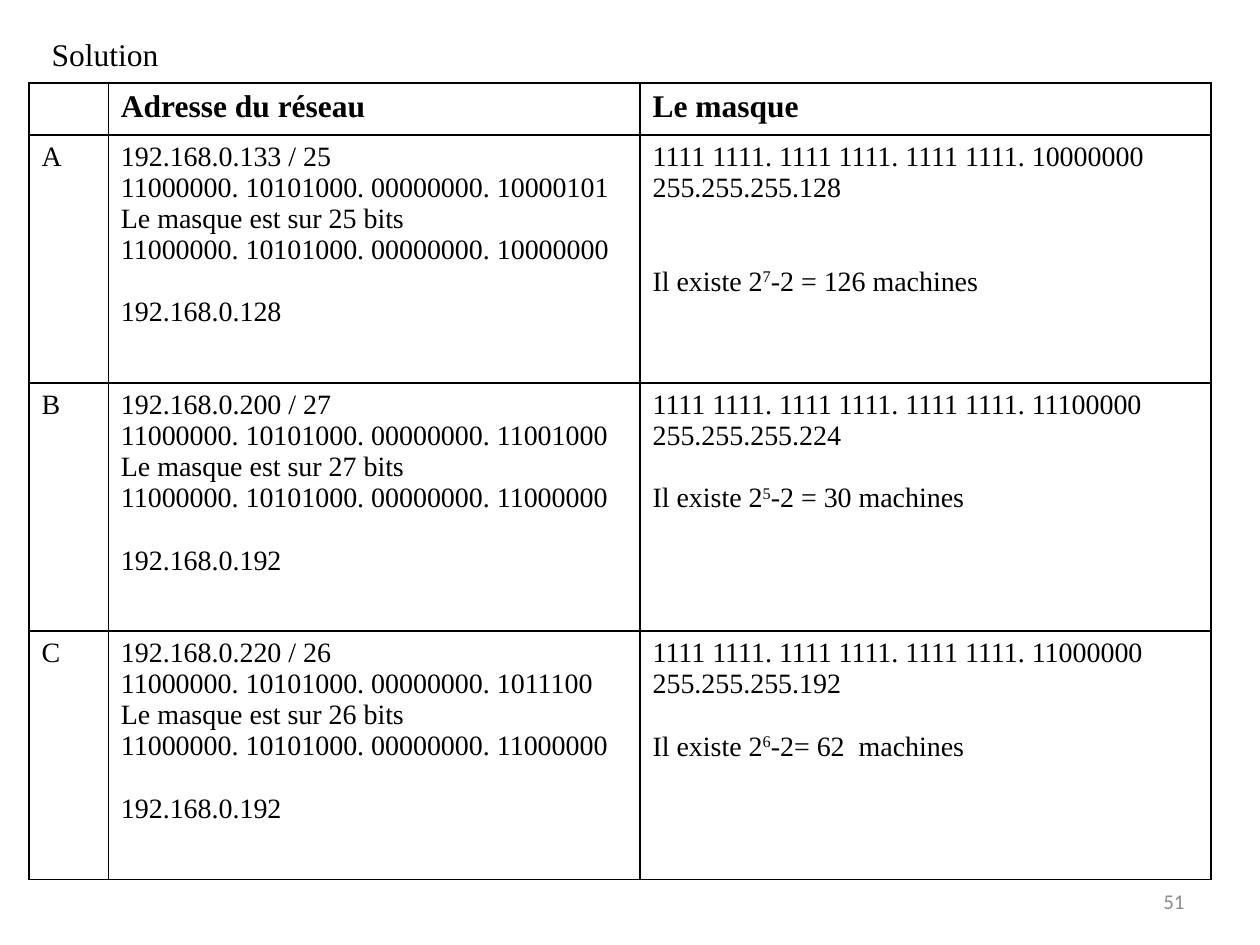
from lxml import etree
from pptx import Presentation
from pptx import util as u
from pptx.dml.color import RGBColor
from pptx.enum import text
from pptx.oxml.ns import qn

SERIF = "Times New Roman"
LINE = 18  # points left open for one skipped line of body text
COLUMNS = [0.63, 4.22, 4.53]
ROWS = [0.41] + [1.97] * 3
HEADINGS = ["", "Adresse du réseau", "Le masque"]

# label, address lines, network address, mask lines, skipped lines, host count
EXERCISES = [
    ("A",
     ["192.168.0.133 / 25", "11000000. 10101000. 00000000. 10000101",
      "Le masque est sur 25 bits", "11000000. 10101000. 00000000. 10000000"],
     "192.168.0.128",
     ["1111 1111. 1111 1111. 1111 1111. 10000000", "255.255.255.128"],
     2, "Il existe 2^7^-2 = 126 machines"),
    ("B",
     ["192.168.0.200 / 27", "11000000. 10101000. 00000000. 11001000",
      "Le masque est sur 27 bits", "11000000. 10101000. 00000000. 11000000"],
     "192.168.0.192",
     ["1111 1111. 1111 1111. 1111 1111. 11100000", "255.255.255.224"],
     1, "Il existe 2^5^-2 = 30 machines"),
    ("C",
     ["192.168.0.220 / 26", "11000000. 10101000. 00000000. 1011100",
      "Le masque est sur 26 bits", "11000000. 10101000. 00000000. 11000000"],
     "192.168.0.192",
     ["1111 1111. 1111 1111. 1111 1111. 11000000", "255.255.255.192"],
     1, "Il existe 2^6^-2= 62  machines"),
]


def rgb(hex_colour):
    return RGBColor.from_string(hex_colour)


def write(frame, lines, size=16, font=SERIF, colour="000000", bold=False,
          align=text.PP_ALIGN.LEFT, last_gap=0):
    """Write one paragraph per line; ^marks^ enclose a superscript."""
    for index, line in enumerate(lines):
        paragraph = frame.paragraphs[0] if index == 0 else frame.add_paragraph()
        paragraph.alignment = align
        if last_gap and index == len(lines) - 1:
            paragraph.space_before = u.Pt(last_gap)
        for part, wording in enumerate(line.split("^")):
            run = paragraph.add_run()
            run.text = wording
            run.font.size, run.font.name = u.Pt(size), font
            run.font.bold = bold
            run.font.color.rgb = rgb(colour)
            if part % 2:
                run.font._element.set("baseline", "30000")


def place(shape, left, top, width, height):
    shape.left, shape.top = u.Inches(left), u.Inches(top)
    shape.width, shape.height = u.Inches(width), u.Inches(height)


def style_cell(cell, colour="000000", width=1):
    properties = cell._tc.get_or_add_tcPr()
    for side in ("lnL", "lnR", "lnT", "lnB"):
        border = etree.SubElement(properties, qn("a:" + side),
                                  w=str(u.Pt(width)))
        fill = etree.SubElement(border, qn("a:solidFill"))
        etree.SubElement(fill, qn("a:srgbClr"), val=colour)
    cell.fill.solid()
    cell.fill.fore_color.rgb = rgb("FFFFFF")


def add_solution_table(slide):
    table = slide.shapes.add_table(
        len(ROWS), len(COLUMNS), u.Inches(0.23), u.Inches(0.66),
        u.Inches(sum(COLUMNS)), u.Inches(sum(ROWS))).table
    table.first_row = table.horz_banding = False
    for column, width in zip(table.columns, COLUMNS):
        column.width = u.Inches(width)
    for row, height in zip(table.rows, ROWS):
        row.height = u.Inches(height)
    for cell in table.iter_cells():
        style_cell(cell)
    for column, heading in enumerate(HEADINGS):
        if heading:
            write(table.cell(0, column).text_frame, [heading], size=18, bold=True)
    for row, exercise in enumerate(EXERCISES, start=1):
        label, address, network, mask, skipped, hosts = exercise
        frames = [table.cell(row, column).text_frame for column in range(3)]
        write(frames[0], [label])
        write(frames[1], address + [network], last_gap=LINE)
        write(frames[2], mask + [hosts], last_gap=LINE * skipped)


def add_title(slide):
    title = slide.shapes.title
    place(title, 0.31, 0.23, 1.12, 0.4)
    frame = title.text_frame
    frame.auto_size = text.MSO_AUTO_SIZE.NONE
    frame.vertical_anchor = text.MSO_ANCHOR.TOP
    write(frame, ["Solution"], size=18)


def add_page_number(slide):
    number = slide.shapes.add_textbox(0, 0, 0, 0)
    place(number, 7.17, 6.95, 2.33, 0.4)
    frame = number.text_frame
    frame.word_wrap = True
    frame.vertical_anchor = text.MSO_ANCHOR.MIDDLE
    write(frame, ["51"], size=12, font="Calibri", colour="8C8C8C",
          align=text.PP_ALIGN.RIGHT)


def main():
    deck = Presentation()
    deck.slide_width, deck.slide_height = u.Inches(10), u.Inches(7.5)
    slide = deck.slides.add_slide(deck.slide_layouts[5])
    add_page_number(slide)
    add_title(slide)
    add_solution_table(slide)
    deck.save("out.pptx")


if __name__ == "__main__":
    main()
